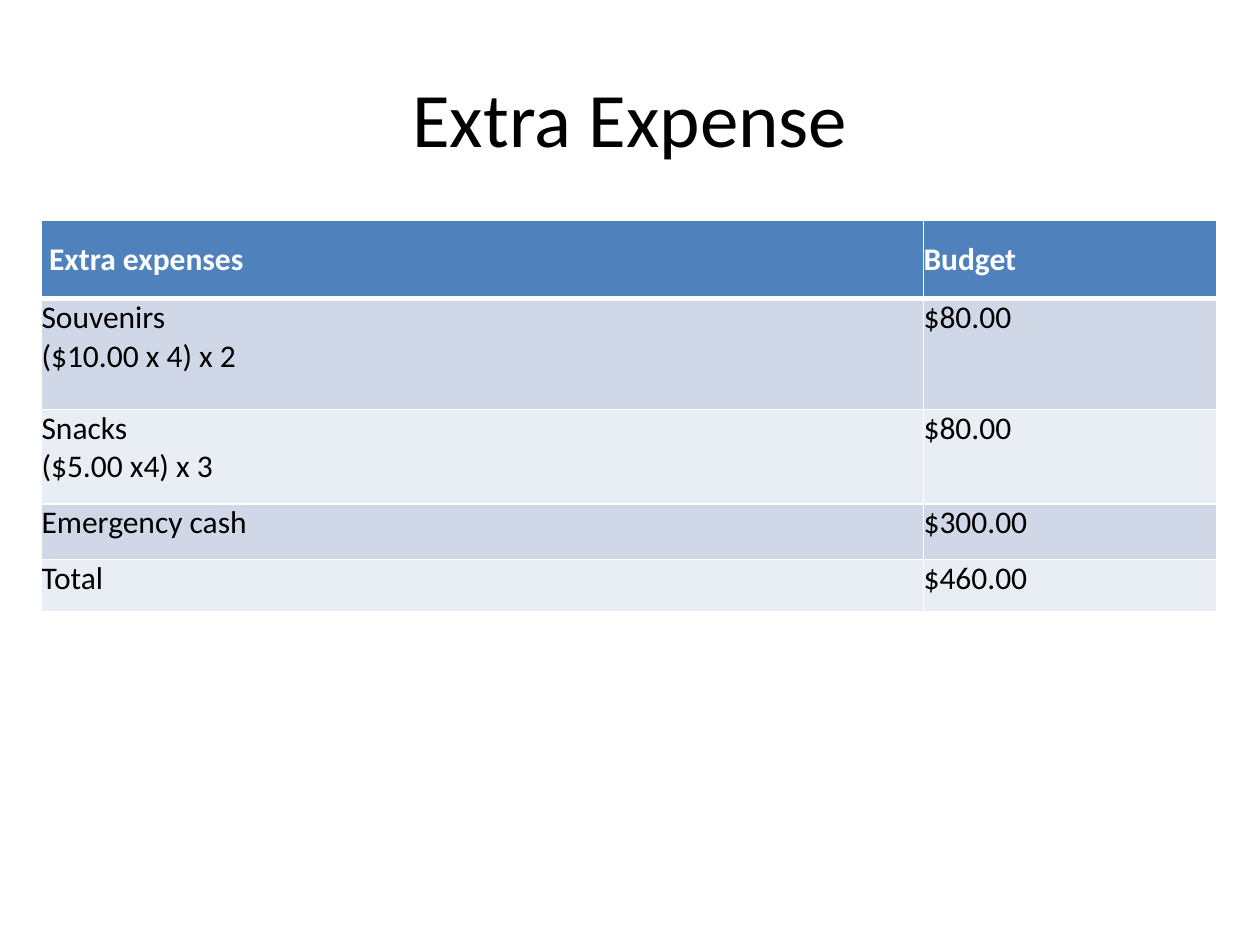
from lxml import etree
from pptx import Presentation
from pptx.dml.color import RGBColor
from pptx.enum import text
from pptx.oxml.ns import qn
from pptx.util import Inches, Pt

BLACK = RGBColor(0x00, 0x00, 0x00)
WHITE = RGBColor(0xFF, 0xFF, 0xFF)
HEADER_BLUE = RGBColor(0x4F, 0x81, 0xBD)
BANDS = [RGBColor(0xD0, 0xD8, 0xE8), RGBColor(0xE9, 0xED, 0xF4)]
FONT = "Calibri"

COL_WIDTHS = [7, 2.33]
ROW_HEIGHTS = [0.62, 0.88, 0.75, 0.44, 0.42]
EXPENSES = [
    ("Extra expenses", "Budget"),
    ("Souvenirs\n($10.00 x 4) x 2", "$80.00"),
    ("Snacks\n($5.00 x4) x 3", "$80.00"),
    ("Emergency cash", "$300.00"),
    ("Total", "$460.00"),
]


def format_text(tf, size, color, bold=False):
    for p in tf.paragraphs:
        for r in p.runs:
            r.font.name = FONT
            r.font.size = Pt(size)
            r.font.bold = bold
            r.font.color.rgb = color


def set_borders(cell, top, bottom):
    """Draw white borders; top and bottom are widths in points."""
    tc_pr = cell._tc.get_or_add_tcPr()
    for tag, width in (("a:lnL", 1), ("a:lnR", 1), ("a:lnT", top), ("a:lnB", bottom)):
        ln = etree.SubElement(tc_pr, qn(tag), w=str(Pt(width)))
        fill = etree.SubElement(ln, qn("a:solidFill"))
        etree.SubElement(fill, qn("a:srgbClr"), val=str(WHITE))


def add_title(s, wording):
    title = s.shapes.title
    title.left, title.top = Inches(0.5), Inches(0.3)
    title.width, title.height = Inches(9), Inches(1.25)
    tf = title.text_frame
    tf.text = wording
    tf.vertical_anchor = text.MSO_ANCHOR.MIDDLE
    tf.paragraphs[0].alignment = text.PP_ALIGN.CENTER
    format_text(tf, 44, BLACK)


def fill_cell(cell, wording, row):
    header = row == 0
    cell.margin_left = cell.margin_right = cell.margin_top = cell.margin_bottom = 0
    cell.vertical_anchor = text.MSO_ANCHOR.MIDDLE if header else text.MSO_ANCHOR.TOP
    set_borders(cell, top=3 if row == 1 else 1, bottom=3 if header else 1)
    cell.fill.solid()
    cell.fill.fore_color.rgb = HEADER_BLUE if header else BANDS[(row - 1) % 2]
    cell.text_frame.text = wording
    format_text(cell.text_frame, 18, WHITE if header else BLACK, bold=header)


def add_expense_table(s):
    table = s.shapes.add_table(
        len(EXPENSES), len(COL_WIDTHS), Inches(0.33), Inches(1.75),
        Inches(sum(COL_WIDTHS)), Inches(sum(ROW_HEIGHTS))).table
    for column, width in zip(table.columns, COL_WIDTHS):
        column.width = Inches(width)
    for i, (height, wordings) in enumerate(zip(ROW_HEIGHTS, EXPENSES)):
        table.rows[i].height = Inches(height)
        for j, wording in enumerate(wordings):
            fill_cell(table.cell(i, j), wording, i)
    table.cell(0, 0).margin_left = Inches(0.06)


def main():
    prs = Presentation()
    prs.slide_width, prs.slide_height = Inches(10), Inches(7.5)
    s = prs.slides.add_slide(prs.slide_layouts[5])
    add_title(s, "Extra Expense")
    add_expense_table(s)
    prs.save("out.pptx")


if __name__ == "__main__":
    main()
